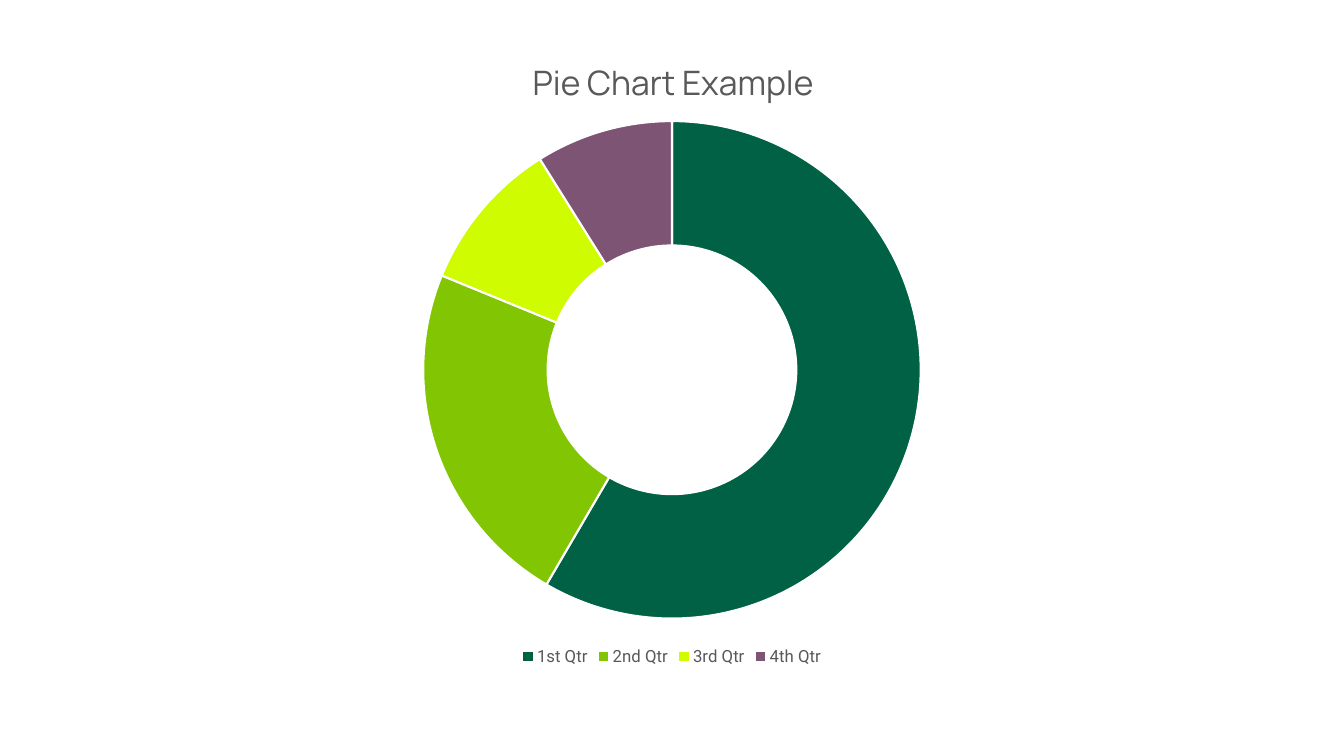
from lxml.etree import SubElement
from pptx import Presentation
from pptx.chart.data import CategoryChartData
from pptx.dml.color import RGBColor
from pptx.enum.chart import XL_CHART_TYPE, XL_LEGEND_POSITION
from pptx.oxml.ns import qn
from pptx.util import Pt

COLORS = {"text": "595959", "base": "000000", "gap": "FFFFFF"}
QUARTERS = {
    "1st Qtr": (59, "006144"),
    "2nd Qtr": (23, "82C503"),
    "3rd Qtr": (10, "CFFC00"),
    "4th Qtr": (9, "7E5475"),
}


def set_font(font, name, size, color):
    font.name = name
    font.size = Pt(size)
    font.bold = False
    font.color.rgb = RGBColor.from_string(COLORS[color])


def set_layout(element, **settings):
    """Fix the place of a chart part, as fractions of the chart area."""
    layout = element.find(qn("c:layout"))
    manual = SubElement(layout, qn("c:manualLayout"))
    for tag, value in settings.items():
        SubElement(manual, qn(f"c:{tag}")).set("val", str(value))


def add_quarter_doughnut(slide, left, top, width, height):
    data = CategoryChartData()
    data.categories = list(QUARTERS)
    data.add_series("Series 1", [value for value, _ in QUARTERS.values()])
    chart = slide.shapes.add_chart(
        XL_CHART_TYPE.DOUGHNUT, Pt(left), Pt(top), Pt(width), Pt(height), data
    ).chart
    set_font(chart.font, "Roboto", 10, "base")

    chart.has_title = True
    title = chart.chart_title
    title.text_frame.text = "Pie Chart Example"
    set_font(title.text_frame.paragraphs[0].runs[0].font, "Manrope", 24, "text")
    title.include_in_layout = False
    set_layout(title.element if hasattr(title, "element") else title._element,
               xMode="edge", yMode="edge", x=0.35, y=0.04)

    chart.has_legend = True
    chart.legend.position = XL_LEGEND_POSITION.BOTTOM
    chart.legend.include_in_layout = False
    set_font(chart.legend.font, "Roboto", 12, "text")

    plot = chart.plots[0]
    plot.vary_by_categories = True
    plot_area = chart.element.find(f".//{qn('c:plotArea')}")
    if plot_area.find(qn("c:layout")) is None:
        plot_area.insert(0, plot_area.makeelement(qn("c:layout")))
    set_layout(plot_area, layoutTarget="inner", xMode="edge", yMode="edge",
               x=0.24, y=0.15, w=0.52, h=0.77)
    plot_area.find(f".//{qn('c:holeSize')}").set("val", "75")

    for index, (_, color) in enumerate(QUARTERS.values()):
        point_format = plot.series[0].points[index].format
        point_format.fill.solid()
        point_format.fill.fore_color.rgb = RGBColor.from_string(color)
        point_format.line.color.rgb = RGBColor.from_string(COLORS["gap"])
        point_format.line.width = Pt(1.5)


def main():
    presentation = Presentation()
    presentation.slide_width, presentation.slide_height = Pt(960), Pt(540)
    slide = presentation.slides.add_slide(presentation.slide_layouts[6])
    add_quarter_doughnut(slide, 134, 17.3, 692, 461.5)
    presentation.save("out.pptx")


if __name__ == "__main__":
    main()
